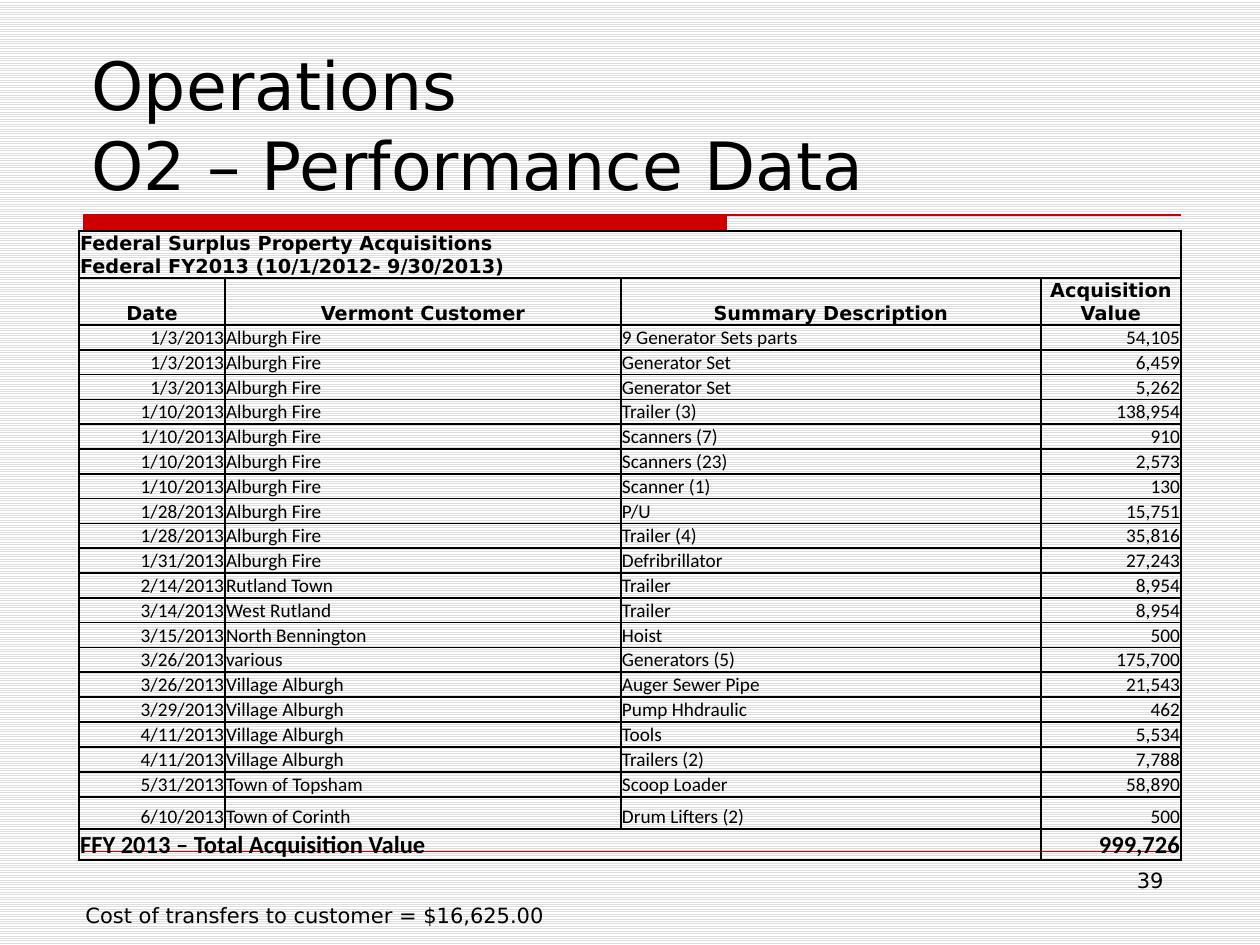
"""Build the Operations O2 performance data slide."""
import copy
import dataclasses

import lxml.etree
import pptx
import pptx.dml.color
import pptx.enum.dml
import pptx.enum.text
import pptx.oxml.ns
import pptx.util

EMU_PER_PX = 914400 / 126
ALIGN = pptx.enum.text.PP_ALIGN
ANCHOR = pptx.enum.text.MSO_ANCHOR
AUTO_SIZE = pptx.enum.text.MSO_AUTO_SIZE


@dataclasses.dataclass(frozen=True)
class Theme:
    """Colours, fonts and type sizes of the slide."""
    ink: str = "000000"
    accent: str = "CC0000"
    stripe: str = "DDDDDD"
    paper: str = "FFFFFF"
    heading_font: str = "DejaVu Sans"
    data_font: str = "Calibri"
    title_size: int = 38
    total_size: int = 14
    note_size: int = 12
    table_size: int = 11


THEME = Theme()
COLUMN_WIDTHS = [146, 396, 420, 140]
ROW_HEIGHTS = [47, 47] + [24] * 14 + [25] * 5 + [32, 31]
COLUMN_ALIGNMENTS = [ALIGN.RIGHT, ALIGN.LEFT, ALIGN.LEFT, ALIGN.RIGHT]
CAPTION = "Federal Surplus Property Acquisitions\nFederal FY2013 (10/1/2012- 9/30/2013)"
HEADERS = ["Date", "Vermont Customer", "Summary Description", "Acquisition Value"]
ACQUISITIONS = [
    ("1/3/2013", "Alburgh Fire", "9 Generator Sets parts", "54,105"),
    ("1/3/2013", "Alburgh Fire", "Generator Set", "6,459"),
    ("1/3/2013", "Alburgh Fire", "Generator Set", "5,262"),
    ("1/10/2013", "Alburgh Fire", "Trailer (3)", "138,954"),
    ("1/10/2013", "Alburgh Fire", "Scanners (7)", "910"),
    ("1/10/2013", "Alburgh Fire", "Scanners (23)", "2,573"),
    ("1/10/2013", "Alburgh Fire", "Scanner (1)", "130"),
    ("1/28/2013", "Alburgh Fire", "P/U", "15,751"),
    ("1/28/2013", "Alburgh Fire", "Trailer (4)", "35,816"),
    ("1/31/2013", "Alburgh Fire", "Defribrillator", "27,243"),
    ("2/14/2013", "Rutland Town", "Trailer", "8,954"),
    ("3/14/2013", "West Rutland", "Trailer", "8,954"),
    ("3/15/2013", "North Bennington", "Hoist", "500"),
    ("3/26/2013", "various", "Generators (5)", "175,700"),
    ("3/26/2013", "Village Alburgh", "Auger Sewer Pipe", "21,543"),
    ("3/29/2013", "Village Alburgh", "Pump Hhdraulic", "462"),
    ("4/11/2013", "Village Alburgh", "Tools", "5,534"),
    ("4/11/2013", "Village Alburgh", "Trailers (2)", "7,788"),
    ("5/31/2013", "Town of Topsham", "Scoop Loader", "58,890"),
    ("6/10/2013", "Town of Corinth", "Drum Lifters (2)", "500"),
]


def px(length):
    """Turn a length in px into EMU."""
    return pptx.util.Emu(round(length * EMU_PER_PX))


def rgb(value):
    """Turn a hex string into a colour."""
    return pptx.dml.color.RGBColor.from_string(value)


def write_text(text_frame, text, size=THEME.table_size, font=THEME.heading_font,
               bold=False, align=ALIGN.LEFT):
    """Fill a text frame; newlines start paragraphs and vertical tabs break lines."""
    text_frame.text = text
    for paragraph in text_frame.paragraphs:
        paragraph.alignment = align
        for run in paragraph.runs:
            run.font.size = pptx.util.Pt(size)
            run.font.name = font
            run.font.bold = bold
            run.font.color.rgb = rgb(THEME.ink)
        for line_break in paragraph._p.findall(pptx.oxml.ns.qn("a:br")):
            line_break.insert(0, copy.deepcopy(paragraph.runs[0]._r.rPr))


def set_background(slide):
    """Give the slide its horizontal stripes."""
    fill = slide.background.fill
    fill.patterned()
    fill.pattern = pptx.enum.dml.MSO_PATTERN.LIGHT_HORIZONTAL
    fill.fore_color.rgb = rgb(THEME.stripe)
    fill.back_color.rgb = rgb(THEME.paper)


def add_title(slide, text, left, top, width, height):
    """Place and format the title placeholder."""
    title = slide.shapes.title
    title.left, title.top, title.width, title.height = map(px, (left, top, width, height))
    title.text_frame.auto_size = AUTO_SIZE.NONE
    title.text_frame.vertical_anchor = ANCHOR.BOTTOM
    write_text(title.text_frame, text, size=THEME.title_size)


def add_title_rule(slide, left, top, bar_right, bar_bottom, right):
    """Draw the heavy bar and the thin rule under the title."""
    builder = slide.shapes.build_freeform(left, top, scale=EMU_PER_PX)
    builder.add_line_segments([(bar_right, top), (bar_right, bar_bottom), (left, bar_bottom)])
    builder.move_to(left, top)
    builder.add_line_segments([(right, top)], close=False)
    shape = builder.convert_to_shape()
    shape.shadow.inherit = False
    shape.fill.solid()
    shape.fill.fore_color.rgb = rgb(THEME.accent)
    shape.line.color.rgb = rgb(THEME.accent)
    shape.line.width = pptx.util.Pt(0.75)


def add_footer_rule(slide, left, right, top):
    """Draw the hairline at the foot of the slide."""
    connector = slide.shapes.add_connector(
        pptx.enum.shapes.MSO_CONNECTOR.STRAIGHT, px(left), px(top), px(right), px(top))
    connector.line.color.rgb = rgb(THEME.accent)
    connector.line.width = pptx.util.Pt(0.25)
    lxml.etree.SubElement(connector._element.spPr, pptx.oxml.ns.qn("a:effectLst"))


def add_note(slide, text, left, top, width, height, auto_size=AUTO_SIZE.NONE, **text_format):
    """Add a small text box."""
    text_frame = slide.shapes.add_textbox(*map(px, (left, top, width, height))).text_frame
    text_frame.word_wrap = True
    text_frame.auto_size = auto_size
    write_text(text_frame, text, size=THEME.note_size, **text_format)


def format_cell(cell):
    """Give a cell no fill, tight margins and thin borders."""
    cell.fill.background()
    cell.vertical_anchor = ANCHOR.BOTTOM
    cell.margin_left = cell.margin_right = cell.margin_top = px(1)
    cell.margin_bottom = 0
    properties = cell._tc.get_or_add_tcPr()
    for index, side in enumerate(("lnL", "lnR", "lnT", "lnB")):
        border = pptx.oxml.parse_xml(
            f'<a:{side} {pptx.oxml.ns.nsdecls("a")} w="12700"><a:solidFill>'
            f'<a:srgbClr val="{THEME.ink}"/></a:solidFill></a:{side}>')
        properties.insert(index, border)


def add_acquisition_table(slide, left, top):
    """Add the table of acquisitions with its caption, headers and total."""
    table = slide.shapes.add_table(
        len(ROW_HEIGHTS), len(COLUMN_WIDTHS), px(left), px(top),
        px(sum(COLUMN_WIDTHS)), px(sum(ROW_HEIGHTS))).table
    table.first_row = table.horz_banding = False
    for column, width in zip(table.columns, COLUMN_WIDTHS):
        column.width = px(width)
    for row, height in zip(table.rows, ROW_HEIGHTS):
        row.height = px(height)
    for cell in table.iter_cells():
        format_cell(cell)

    last_row = len(ROW_HEIGHTS) - 1
    table.cell(0, 0).merge(table.cell(0, 3))
    table.cell(last_row, 0).merge(table.cell(last_row, 2))
    write_text(table.cell(0, 0).text_frame, CAPTION, bold=True)
    for column_index, header in enumerate(HEADERS):
        write_text(table.cell(1, column_index).text_frame, header, bold=True, align=ALIGN.CENTER)
    for row_index, acquisition in enumerate(ACQUISITIONS, start=2):
        for column_index, (text, align) in enumerate(zip(acquisition, COLUMN_ALIGNMENTS)):
            write_text(table.cell(row_index, column_index).text_frame, text,
                       font=THEME.data_font, align=align)
    totals = [(0, "FFY 2013 – Total Acquisition Value", ALIGN.LEFT), (3, "999,726", ALIGN.RIGHT)]
    for column_index, text, align in totals:
        write_text(table.cell(last_row, column_index).text_frame, text,
                   size=THEME.total_size, font=THEME.data_font, bold=True, align=align)


def main():
    """Build and save the slide."""
    presentation = pptx.Presentation()
    presentation.slide_width, presentation.slide_height = px(1260), px(945)
    slide = presentation.slides.add_slide(presentation.slide_layouts[5])
    set_background(slide)
    add_title_rule(slide, 84, 215, 726, 231, 1181)
    add_footer_rule(slide, 84, 1176, 851)
    add_note(slide, "39", 903, 861, 273, 66, align=ALIGN.RIGHT)
    add_title(slide, "Operations\vO2 – Performance Data", 79, 42, 1102, 168)
    add_acquisition_table(slide, 79, 231)
    add_note(slide, "Cost of transfers to customer = $16,625.00", 73, 896, 1029, 38,
             auto_size=AUTO_SIZE.SHAPE_TO_FIT_TEXT)
    presentation.save("out.pptx")


if __name__ == "__main__":
    main()
